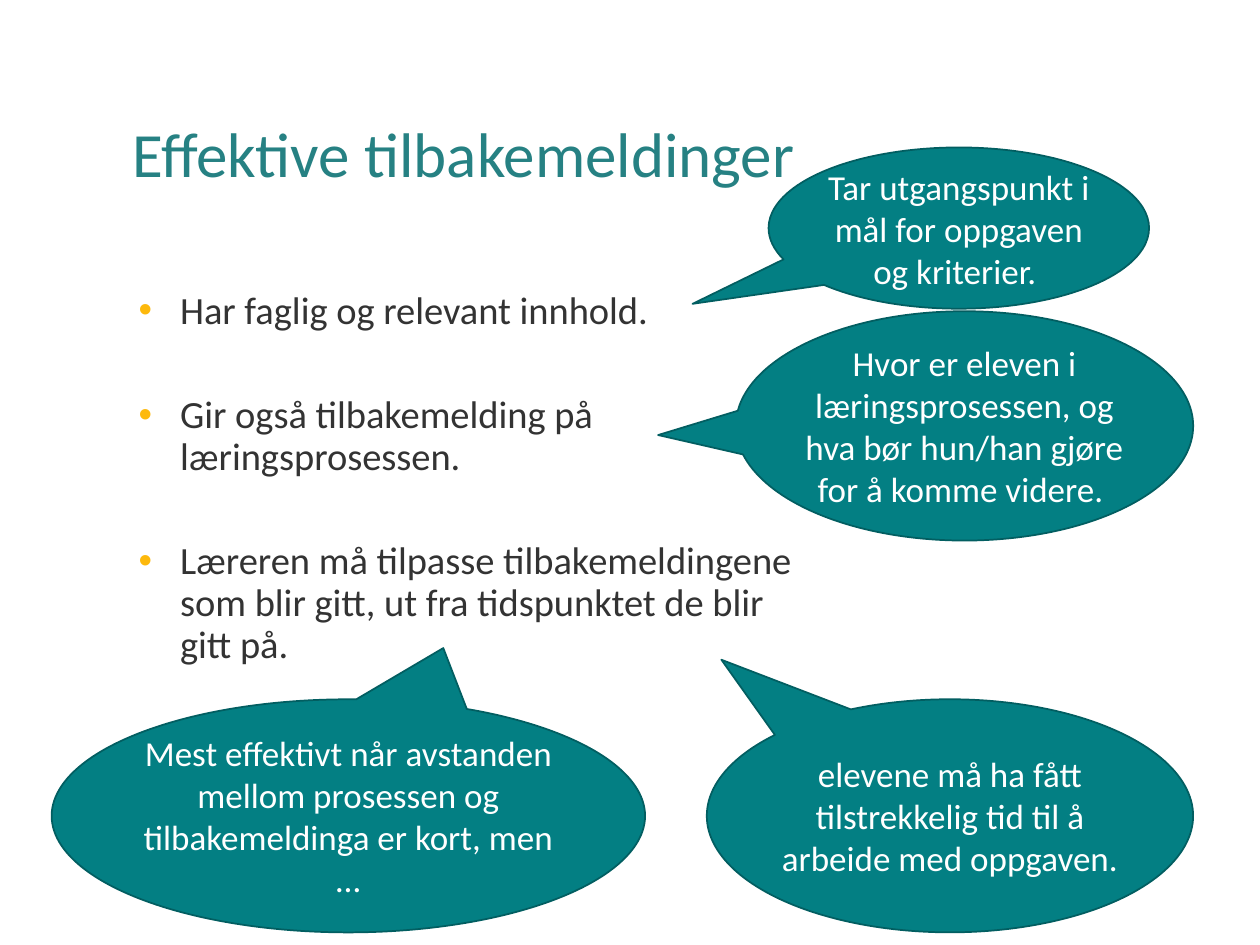
from lxml import etree
from pptx import Presentation
from pptx.dml.color import RGBColor
from pptx.enum.shapes import MSO_SHAPE
from pptx.enum.text import MSO_ANCHOR, PP_ALIGN
from pptx.oxml.ns import qn
from pptx.util import Inches, Pt

TITLE = RGBColor(0x26, 0x81, 0x83)
INK = RGBColor(0x33, 0x33, 0x33)
GOLD = RGBColor(0xFD, 0xB9, 0x0C)
TEAL = RGBColor(0x03, 0x7F, 0x83)
EDGE = RGBColor(0x02, 0x5E, 0x61)
WHITE = RGBColor(0xFF, 0xFF, 0xFF)

BUBBLE = MSO_SHAPE.OVAL_CALLOUT
TOP, MIDDLE = MSO_ANCHOR.TOP, MSO_ANCHOR.MIDDLE
LEFT, CENTER = PP_ALIGN.LEFT, PP_ALIGN.CENTER

CELL = 0.1  # inches per grid column and row


class Page:
    font = "Calibri"
    inset = 0.07

    def __init__(self, deck):
        self.slide = deck.slides.add_slide(deck.slide_layouts[6])

    def box(self, cells):
        return [Inches(n * CELL) for n in cells]

    def frame(self, shape, inset, anchor):
        frame = shape.text_frame
        frame.word_wrap = True
        frame.vertical_anchor = anchor
        frame.margin_left = frame.margin_right = Inches(inset)
        frame.margin_top = frame.margin_bottom = Inches(inset)
        return frame

    def style(self, para, size, color, align=LEFT):
        para.alignment = align
        para.font.name = self.font
        para.font.size = Pt(size)
        para.font.color.rgb = color

    def title(self, text, cells):
        shape = self.slide.shapes.add_textbox(*self.box(cells))
        para = self.frame(shape, self.inset, MIDDLE).paragraphs[0]
        para.text = text
        para.line_spacing = 0.9
        self.style(para, 36, TITLE)

    def bullet(self, para):
        props = para._p.get_or_add_pPr()
        props.set("marL", str(Inches(0.38)))
        props.set("indent", str(Inches(-0.33)))
        color = etree.SubElement(props, qn("a:buClr"))
        etree.SubElement(color, qn("a:srgbClr"), val=str(GOLD))
        etree.SubElement(props, qn("a:buFont"), typeface="Arial")
        etree.SubElement(props, qn("a:buChar"), char="•")

    def points(self, lines, cells):
        shape = self.slide.shapes.add_textbox(*self.box(cells))
        frame = self.frame(shape, self.inset, TOP)
        for i, line in enumerate(lines):
            para = frame.add_paragraph() if i else frame.paragraphs[0]
            para.text = line
            para.line_spacing = 0.9
            para.space_after = Pt(36)
            self.bullet(para)
            self.style(para, 22, INK)

    def callout(self, text, cells, tip):
        shape = self.slide.shapes.add_shape(BUBBLE, *self.box(cells))
        shape.shadow.inherit = False
        shape.fill.solid()
        shape.fill.fore_color.rgb = TEAL
        shape.line.color.rgb = EDGE
        shape.line.width = Pt(1)
        # Tip offset from the centre, as shares of the bubble's size
        shape.adjustments[0], shape.adjustments[1] = tip
        para = self.frame(shape, 0, MIDDLE).paragraphs[0]
        para.text = text
        self.style(para, 20, WHITE, CENTER)


def main():
    deck = Presentation()
    deck.slide_width, deck.slide_height = Inches(10), Inches(7.5)
    page = Page(deck)

    # Heading and main points
    page.title("Effektive tilbakemeldinger", (9.8, 2.9, 84.9, 19.2))
    page.points([
        "Har faglig og relevant innhold.",
        "Gir også tilbakemelding på læringsprosessen.",
        "Læreren må tilpasse tilbakemeldingene som blir gitt, "
        "ut fra tidspunktet de blir gitt på.",
    ], (9.8, 22.4, 54.7, 38.3))

    # Remarks beside the first two points
    page.callout("Tar utgangspunkt i mål for oppgaven og kriterier. ",
                 (61, 11.7, 30.2, 12.8), (-0.7, 0.47))
    page.callout("Hvor er eleven i læringsprosessen, og hva bør hun/han "
                 "gjøre for å komme videre. ",
                 (58.4, 24.7, 36.3, 18.2), (-0.67, 0.04))

    # Remarks below the last point
    low, tall = 55.5, 18.5
    page.callout("Mest effektivt når avstanden mellom prosessen og "
                 "tilbakemeldinga er kort, men …",
                 (4.1, low, 47.1, tall), (0.16, -0.72))
    page.callout("elevene må ha fått tilstrekkelig tid til å arbeide "
                 "med oppgaven.",
                 (56.1, low, 38.6, tall), (-0.47, -0.67))

    deck.save("out.pptx")


if __name__ == "__main__":
    main()
